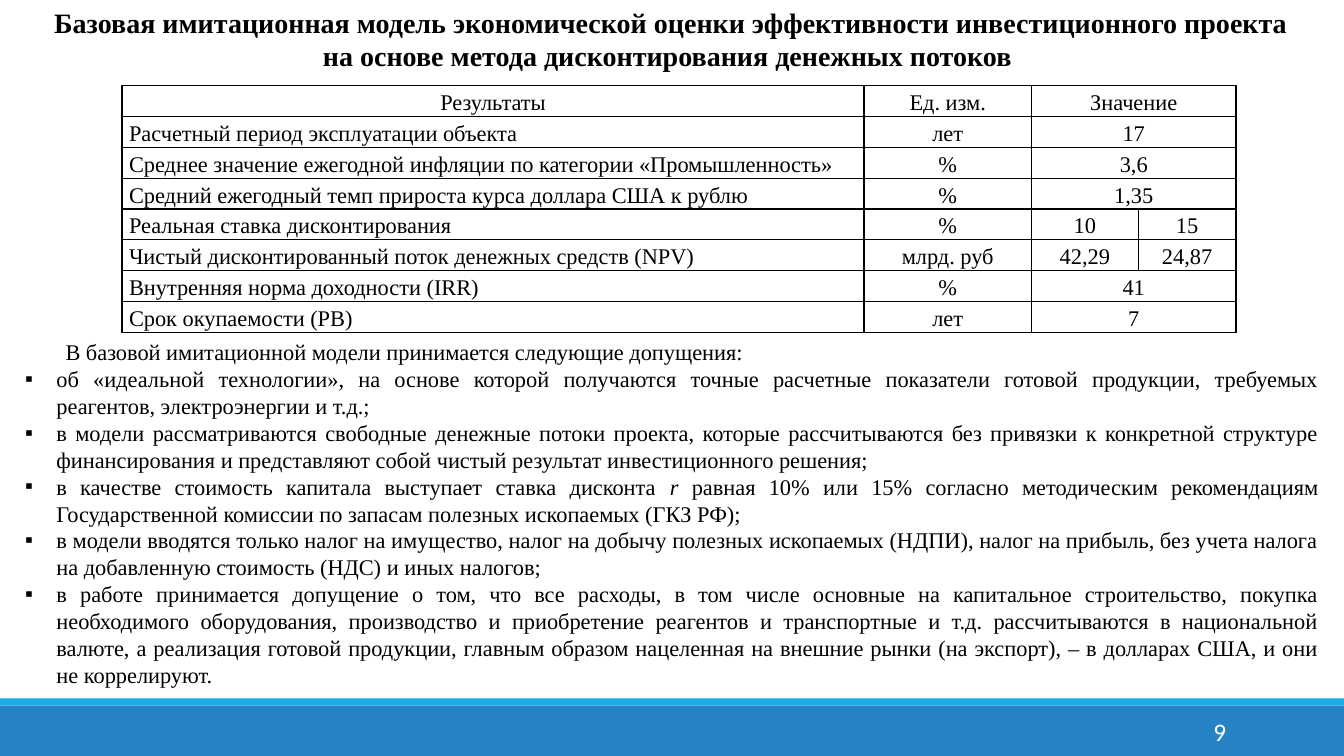
from lxml import etree
from pptx import Presentation
from pptx.dml.color import RGBColor
from pptx.enum.shapes import MSO_SHAPE
from pptx.enum.text import MSO_ANCHOR, MSO_AUTO_SIZE, PP_ALIGN
from pptx.oxml.ns import qn
from pptx.util import Inches, Pt

RECTANGLE = MSO_SHAPE.RECTANGLE
TOP, MIDDLE = MSO_ANCHOR.TOP, MSO_ANCHOR.MIDDLE
NO_AUTOFIT = MSO_AUTO_SIZE.NONE
LEFT, CENTER = PP_ALIGN.LEFT, PP_ALIGN.CENTER
RIGHT, JUSTIFY = PP_ALIGN.RIGHT, PP_ALIGN.JUSTIFY

COLORS = {"text": "000000", "light": "FFFFFF", "band": "2683C6", "stripe": "1CADE4"}
SERIF, SANS = "Times New Roman", "Calibri"


def style(paragraph, size, align, font=SERIF, color="text", bold=False):
    paragraph.alignment = align
    paragraph.font.name = font
    paragraph.font.size = Pt(size)
    paragraph.font.bold = bold
    paragraph.font.color.rgb = RGBColor.from_string(COLORS[color])


def place(box, left, top, width, height, anchor):
    box.left, box.top = Inches(left), Inches(top)
    box.width, box.height = Inches(width), Inches(height)
    frame = box.text_frame
    frame.word_wrap = True
    frame.auto_size = NO_AUTOFIT
    frame.vertical_anchor = anchor
    return frame


deck = Presentation()
deck.slide_width, deck.slide_height = Inches(13.33), Inches(7.5)
page = deck.slides.add_slide(deck.slide_layouts[1])

# Footer bands
for top, height, color in [(7, 0.5, "band"), (6.93, 0.07, "stripe")]:
    band = page.shapes.add_shape(RECTANGLE, 0, Inches(top), deck.slide_width, Inches(height))
    band.shadow.inherit = False
    band.fill.solid()
    band.fill.fore_color.rgb = RGBColor.from_string(COLORS[color])
    band.line.fill.background()

# Page number
number_box = page.shapes.add_textbox(0, 0, 0, 0)
number = place(number_box, 10.83, 7.06, 1.43, 0.4, MIDDLE)
number.text = "9"
style(number.paragraphs[0], 18, RIGHT, SANS, "light")

# Title
title = place(page.shapes.title, 0.31, 0, 12.69, 0.77, TOP)
title.text = (
    "Базовая имитационная модель экономической оценки эффективности "
    "инвестиционного проекта на основе метода дисконтирования денежных потоков "
)
style(title.paragraphs[0], 20, CENTER, bold=True)

# Results table: rows with a single value span both value columns
RESULTS = [
    ("Результаты", "Ед. изм.", "Значение"),
    ("Расчетный период эксплуатации объекта", "лет", "17"),
    ("Среднее значение ежегодной инфляции по категории «Промышленность»", "%", "3,6"),
    ("Средний ежегодный темп прироста курса доллара США к рублю", "%", "1,35"),
    ("Реальная ставка дисконтирования", "%", "10", "15"),
    ("Чистый дисконтированный поток денежных средств (NPV)", "млрд. руб", "42,29", "24,87"),
    ("Внутренняя норма доходности (IRR)", "%", "41"),
    ("Срок окупаемости (PB)", "лет", "7"),
]
COLUMN_WIDTHS = [7.36, 1.66, 1.06, 0.97]
table = page.shapes.add_table(
    len(RESULTS), len(COLUMN_WIDTHS), Inches(1.21), Inches(0.85), Inches(11.05), Inches(2.45)
).table
table.first_row = table.horz_banding = False
for column, width in zip(table.columns, COLUMN_WIDTHS):
    column.width = Inches(width)

for row, values in enumerate(RESULTS):
    if len(values) == 3:
        table.cell(row, 2).merge(table.cell(row, 3))
    for column in range(len(COLUMN_WIDTHS)):
        cell = table.cell(row, column)
        if column < len(values):
            cell.text = values[column]
        cell.fill.background()
        cell.vertical_anchor = MIDDLE
        cell.margin_left = cell.margin_right = Inches(0.07)
        cell.margin_top = cell.margin_bottom = 0
        paragraph = cell.text_frame.paragraphs[0]
        paragraph.line_spacing = 1.15
        style(paragraph, 16, LEFT if row and column == 0 else CENTER)
        # Borders go ahead of the fill
        properties = cell._tc.get_or_add_tcPr()
        for index, side in enumerate(("a:lnL", "a:lnR", "a:lnT", "a:lnB")):
            border = etree.Element(qn(side), w=str(Pt(1)))
            fill = etree.SubElement(border, qn("a:solidFill"))
            etree.SubElement(fill, qn("a:srgbClr"), val=COLORS["text"])
            properties.insert(index, border)

# Assumptions: an intro line, then bullets; odd pieces are italic
ASSUMPTIONS = [
    ["В базовой имитационной модели принимается следующие допущения:"],
    ["об «идеальной технологии», на основе которой получаются точные расчетные показатели "
     "готовой продукции, требуемых реагентов, электроэнергии и т.д.;"],
    ["в модели рассматриваются свободные денежные потоки проекта, которые рассчитываются "
     "без привязки к конкретной структуре финансирования и представляют собой чистый "
     "результат инвестиционного решения;"],
    ["в качестве стоимость капитала выступает ставка дисконта ", "r ",
     "равная 10% или 15% согласно методическим рекомендациям Государственной комиссии "
     "по запасам полезных ископаемых (ГКЗ РФ);"],
    ["в модели вводятся только налог на имущество, налог на добычу полезных ископаемых "
     "(НДПИ), налог на прибыль, без учета налога на добавленную стоимость (НДС) "
     "и иных налогов;"],
    ["в работе принимается допущение о том, что все расходы, в том числе основные на "
     "капитальное строительство, покупка необходимого оборудования, производство и "
     "приобретение реагентов и транспортные и т.д. рассчитываются в национальной валюте, "
     "а реализация готовой продукции, главным образом нацеленная на внешние рынки "
     "(на экспорт), – в долларах США, и они не коррелируют."],
]
body = place(page.placeholders[1], 0.15, 3.29, 13.03, 3.6, MIDDLE)
for index, pieces in enumerate(ASSUMPTIONS):
    paragraph = body.add_paragraph() if index else body.paragraphs[0]
    for position, piece in enumerate(pieces):
        span = paragraph.add_run()
        span.text = piece
        if position % 2:
            span.font.italic = True
    style(paragraph, 16, JUSTIFY)
    paragraph.space_before = Pt(0)
    margin, indent = (0.31, -0.31) if index else (0, 0.4)
    properties = paragraph._p.get_or_add_pPr()
    properties.set("marL", str(Inches(margin)))
    properties.set("indent", str(Inches(indent)))
    bullet = etree.Element(qn("a:buChar"), char="▪") if index else etree.Element(qn("a:buNone"))
    properties.find(qn("a:defRPr")).addprevious(bullet)

deck.save("out.pptx")
